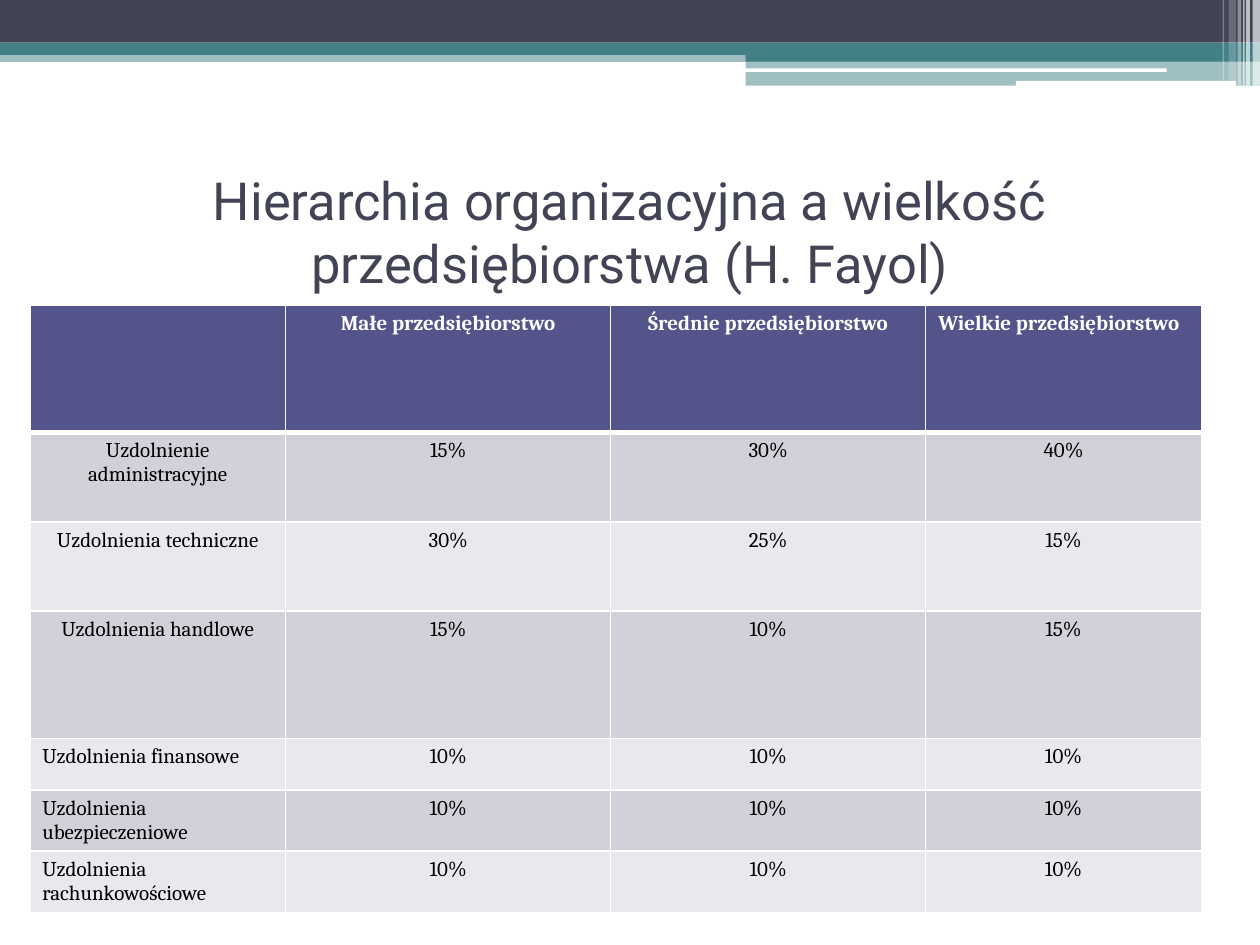
from dataclasses import dataclass

from lxml.etree import SubElement
from pptx import Presentation
from pptx.dml.color import RGBColor
from pptx.enum.shapes import MSO_SHAPE
from pptx.enum.text import MSO_ANCHOR, MSO_AUTO_SIZE, PP_ALIGN
from pptx.oxml.ns import qn
from pptx.slide import Slide
from pptx.util import Cm, Pt

WHITE = RGBColor(0xFF, 0xFF, 0xFF)
BLACK = RGBColor(0x00, 0x00, 0x00)
SLATE = RGBColor(0x42, 0x44, 0x56)
TEAL = RGBColor(0x43, 0x80, 0x86)
INDIGO = RGBColor(0x53, 0x54, 0x8A)
DARK = RGBColor(0xD1, 0xD1, 0xDA)
LIGHT = RGBColor(0xE9, 0xE9, 0xED)
MID = PP_ALIGN.CENTER
LEFT = PP_ALIGN.LEFT


@dataclass
class Bar:
    left: float
    top: float
    width: float
    height: float
    color: RGBColor
    alpha: int = 100
    round: bool = False


@dataclass
class Row:
    height: float
    texts: tuple[str, ...]
    align: PP_ALIGN = MID


BARS = [
    Bar(0, 1.02, 25.4, 0.23, TEAL, 50),
    Bar(0, 0, 25.4, 0.86, SLATE),
    Bar(0, 0.86, 25.4, 0.25, TEAL),
    Bar(15.03, 0.99, 10.37, 0.25, TEAL),
    Bar(15.03, 1.23, 10.37, 0.5, TEAL, 50),
    Bar(15.01, 1.38, 8.51, 0.07, WHITE, round=True),
    Bar(20.48, 1.63, 4.44, 0.1, WHITE, round=True),
    Bar(25.25, 0, 0.15, 1.73, WHITE, 65),
    Bar(25.12, 0, 0.08, 1.73, WHITE, 65),
    Bar(25.06, 0, 0.03, 1.73, WHITE, 60),
    Bar(24.95, 0, 0.07, 1.73, WHITE, 40),
    Bar(24.77, 0, 0.15, 1.63, WHITE, 20),
    Bar(24.65, 0, 0.03, 1.63, WHITE, 30),
]

WIDTHS = [5.16, 6.55, 6.35, 5.56]
ROWS = [
    Row(2.57, ("", "Małe przedsiębiorstwo", "Średnie przedsiębiorstwo", "Wielkie przedsiębiorstwo")),
    Row(1.8, ("Uzdolnienie administracyjne", "15%", "30%", "40%")),
    Row(1.8, ("Uzdolnienia techniczne", "30%", "25%", "15%")),
    Row(2.57, ("Uzdolnienia handlowe", "15%", "10%", "15%")),
    Row(1.04, ("Uzdolnienia finansowe", "10%", "10%", "10%"), LEFT),
    Row(1.23, ("Uzdolnienia ubezpieczeniowe", "10%", "10%", "10%"), LEFT),
    Row(1.23, ("Uzdolnienia rachunkowościowe", "10%", "10%", "10%"), LEFT),
]


def draw_bar(slide: Slide, bar: Bar) -> None:
    kind = MSO_SHAPE.ROUNDED_RECTANGLE if bar.round else MSO_SHAPE.RECTANGLE
    shape = slide.shapes.add_shape(
        kind, Cm(bar.left), Cm(bar.top), Cm(bar.width), Cm(bar.height))
    shape.shadow.inherit = False
    shape.line.fill.background()
    shape.fill.solid()
    shape.fill.fore_color.rgb = bar.color
    if bar.alpha < 100:
        tint = shape.fill._xPr.find(qn("a:solidFill"))[0]
        SubElement(tint, qn("a:alpha"), val=str(bar.alpha * 1000))


def draw_title(slide: Slide, text: str) -> None:
    title = slide.shapes.title
    title.left, title.top = Cm(1.27), Cm(3.18)
    title.width, title.height = Cm(22.86), Cm(2.97)
    frame = title.text_frame
    frame.word_wrap = True
    frame.auto_size = MSO_AUTO_SIZE.NONE
    frame.vertical_anchor = MSO_ANCHOR.MIDDLE
    line = frame.paragraphs[0]
    line.alignment = MID
    run = line.add_run()
    run.text = text
    run.font.name = "Roboto"
    run.font.size = Pt(30)
    run.font.color.rgb = SLATE


def add_edge(cell, side: str, width: int) -> None:
    edge = SubElement(cell._tc.get_or_add_tcPr(), qn(f"a:ln{side}"), w=str(Pt(width)))
    fill = SubElement(edge, qn("a:solidFill"))
    SubElement(fill, qn("a:srgbClr"), val=str(WHITE))


def fill_cell(cell, text: str, align: PP_ALIGN, level: int) -> None:
    head = level == 0
    for side in "LRTB":
        thick = (level, side) in ((0, "B"), (1, "T"))
        add_edge(cell, side, 3 if thick else 1)
    cell.fill.solid()
    cell.fill.fore_color.rgb = INDIGO if head else DARK if level % 2 else LIGHT
    line = cell.text_frame.paragraphs[0]
    line.alignment = align
    if text:
        run = line.add_run()
        run.text = text
        run.font.name = "Cambria"
        run.font.size = Pt(12)
        run.font.bold = head
        run.font.color.rgb = WHITE if head else BLACK


def draw_table(slide: Slide, rows: list[Row]) -> None:
    table = slide.shapes.add_table(
        len(rows), len(WIDTHS), Cm(0.6), Cm(6.15),
        Cm(sum(WIDTHS)), Cm(sum(row.height for row in rows))).table
    for column, width in zip(table.columns, WIDTHS):
        column.width = Cm(width)
    for level, row in enumerate(rows):
        table.rows[level].height = Cm(row.height)
        for place, text in enumerate(row.texts):
            align = MID if place else row.align
            if level == 0 and place == len(WIDTHS) - 1:
                align = LEFT
            fill_cell(table.cell(level, place), text, align, level)


def main() -> None:
    deck = Presentation()
    deck.slide_width, deck.slide_height = Cm(25.4), Cm(19.05)
    slide = deck.slides.add_slide(deck.slide_layouts[5])
    for bar in BARS:
        draw_bar(slide, bar)
    draw_title(slide, "Hierarchia organizacyjna a wielkość przedsiębiorstwa (H. Fayol)")
    draw_table(slide, ROWS)
    deck.save("out.pptx")


if __name__ == "__main__":
    main()
